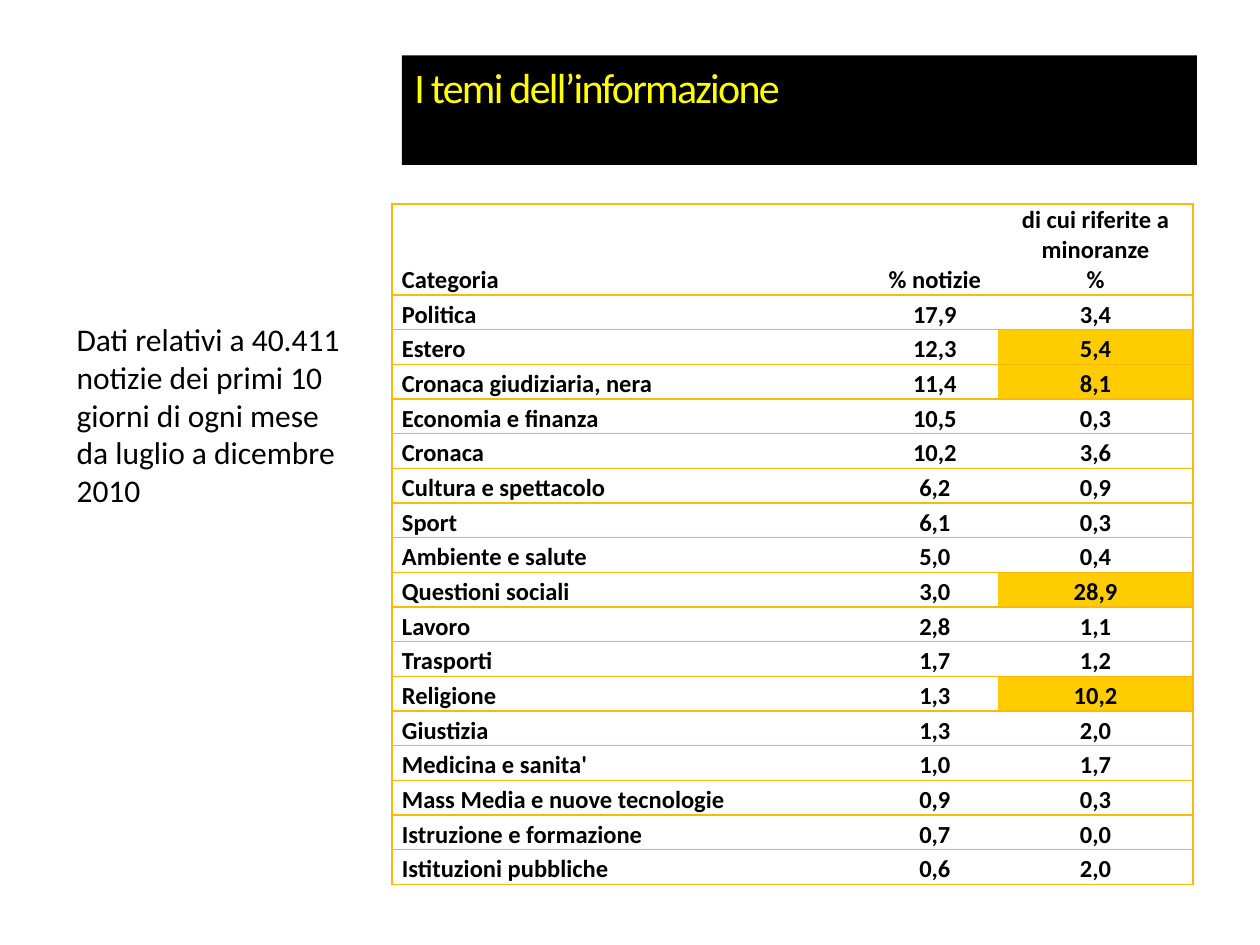
from lxml import etree
from pptx import Presentation
from pptx.dml.color import RGBColor
from pptx.enum.shapes import MSO_SHAPE
from pptx.enum.text import MSO_ANCHOR, MSO_AUTO_SIZE, PP_ALIGN
from pptx.oxml.ns import qn
from pptx.util import Inches, Pt

RECTANGLE = MSO_SHAPE.RECTANGLE
TOP, BOTTOM = MSO_ANCHOR.TOP, MSO_ANCHOR.BOTTOM
LEFT, CENTER = PP_ALIGN.LEFT, PP_ALIGN.CENTER
GROW = MSO_AUTO_SIZE.SHAPE_TO_FIT_TEXT

COLORS = {
    "black": "000000",
    "title": "FFFF00",
    "border": "FEB80A",
    "highlight": "FFCC00",
}
PLAIN_TABLE_STYLE = "{2D5ABB26-0587-4C30-8999-92F81FD0307C}"
COLUMN_WIDTHS = [3.81, 1, 1.55]
TABLE_HEIGHT = 5.4
HEADER_HEIGHT = 0.72
HIGHLIGHTED = {"Estero", "Cronaca giudiziaria, nera", "Questioni sociali", "Religione"}
NOTE = [
    "Dati relativi a 40.411",
    "notizie dei primi 10",
    "giorni di ogni mese",
    "da luglio a dicembre",
    "2010",
]
TOPICS = [
    ("Categoria", "% notizie", "di cui riferite a minoranze\n%"),
    ("Politica", "17,9", "3,4"),
    ("Estero", "12,3", "5,4"),
    ("Cronaca giudiziaria, nera", "11,4", "8,1"),
    ("Economia e finanza", "10,5", "0,3"),
    ("Cronaca", "10,2", "3,6"),
    ("Cultura e spettacolo", "6,2", "0,9"),
    ("Sport", "6,1", "0,3"),
    ("Ambiente e salute", "5,0", "0,4"),
    ("Questioni sociali", "3,0", "28,9"),
    ("Lavoro", "2,8", "1,1"),
    ("Trasporti", "1,7", "1,2"),
    ("Religione", "1,3", "10,2"),
    ("Giustizia", "1,3", "2,0"),
    ("Medicina e sanita'", "1,0", "1,7"),
    ("Mass Media e nuove tecnologie", "0,9", "0,3"),
    ("Istruzione e formazione", "0,7", "0,0"),
    ("Istituzioni pubbliche", "0,6", "2,0"),
]


def color(name):
    return RGBColor.from_string(COLORS[name])


def set_values(target, values):
    for name, value in values.items():
        setattr(target, name, value)


class SlideBuilder:
    font_name = "Calibri"

    def __init__(self, slide):
        self.slide = slide

    def fill_text(self, frame, lines, size, color_name="black", alignment=LEFT, bold=False, spacing=None):
        frame.text = "\n".join(lines)
        for paragraph in frame.paragraphs:
            paragraph.alignment = alignment
            for run in paragraph.runs:
                set_values(run.font, {"name": self.font_name, "size": Pt(size), "bold": bold})
                run.font.color.rgb = color(color_name)
                if spacing is not None:
                    run._r.get_or_add_rPr().set("spc", str(spacing * 100))

    def title(self, text, left, top, width, height):
        shape = self.slide.shapes.add_shape(
            RECTANGLE, Inches(left), Inches(top), Inches(width), Inches(height))
        shape.shadow.inherit = False
        shape.fill.solid()
        shape.fill.fore_color.rgb = color("black")
        shape.line.fill.background()
        set_values(shape.text_frame, {"vertical_anchor": TOP, "word_wrap": True})
        self.fill_text(shape.text_frame, [text], 24, "title", spacing=-1)

    def note(self, lines, left, top, width, height):
        shape = self.slide.shapes.add_textbox(
            Inches(left), Inches(top), Inches(width), Inches(height))
        set_values(shape.text_frame, {"word_wrap": False, "auto_size": GROW})
        self.fill_text(shape.text_frame, lines, 18)

    def borders(self, cell, edges):
        properties = cell._tc.get_or_add_tcPr()
        for position, edge in enumerate(side for side in "LRTB" if side in edges):
            line = etree.Element(qn(f"a:ln{edge}"), w=str(Pt(0.94)))
            fill = etree.SubElement(line, qn("a:solidFill"))
            etree.SubElement(fill, qn("a:srgbClr"), val=COLORS["border"])
            properties.insert(position, line)

    def cell(self, cell, text, alignment, highlighted, edges):
        set_values(cell, {
            "vertical_anchor": BOTTOM,
            "margin_left": Inches(0.08),
            "margin_right": Inches(0.08),
            "margin_top": Inches(0.01),
            "margin_bottom": 0,
        })
        self.fill_text(cell.text_frame, text.split("\n"), 14, alignment=alignment, bold=True)
        if highlighted:
            cell.fill.solid()
            cell.fill.fore_color.rgb = color("highlight")
        else:
            cell.fill.background()
        self.borders(cell, edges)

    def table(self, rows, left, top):
        last_row, last_column = len(rows) - 1, len(COLUMN_WIDTHS) - 1
        table = self.slide.shapes.add_table(
            len(rows), len(COLUMN_WIDTHS), Inches(left), Inches(top),
            Inches(sum(COLUMN_WIDTHS)), Inches(TABLE_HEIGHT)).table
        set_values(table, {"first_row": False, "horz_banding": False})
        table._tbl.tblPr.find(qn("a:tableStyleId")).text = PLAIN_TABLE_STYLE
        for column, width in zip(table.columns, COLUMN_WIDTHS):
            column.width = Inches(width)
        row_height = (TABLE_HEIGHT - HEADER_HEIGHT) / last_row
        for row_index, values in enumerate(rows):
            table.rows[row_index].height = Inches(row_height if row_index else HEADER_HEIGHT)
            row_edges = "TB" if row_index % 2 == 0 else "B" if row_index == last_row else ""
            for column_index, text in enumerate(values):
                side = {0: "L", last_column: "R"}.get(column_index, "")
                self.cell(
                    table.cell(row_index, column_index), text,
                    CENTER if column_index else LEFT,
                    column_index == last_column and values[0] in HIGHLIGHTED,
                    row_edges + side)


def main():
    presentation = Presentation()
    set_values(presentation, {"slide_width": Inches(10), "slide_height": Inches(7.5)})
    builder = SlideBuilder(presentation.slides.add_slide(presentation.slide_layouts[6]))
    builder.title("I temi dell’informazione", 3.19, 0.44, 6.31, 0.87)
    builder.table(TOPICS, 3.11, 1.62)
    builder.note(NOTE, 0.51, 2.49, 2.37, 1.62)
    presentation.save("out.pptx")


if __name__ == "__main__":
    main()
